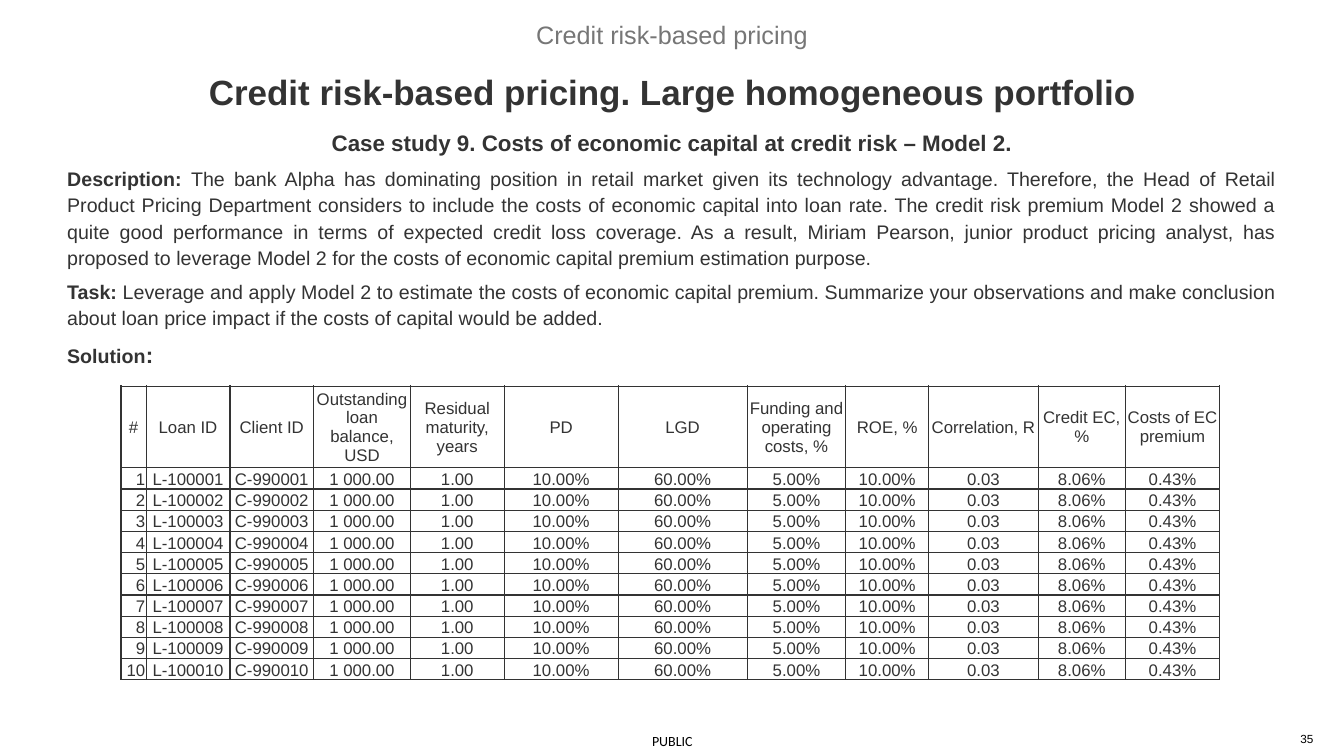
"""Build the case study slide on costs of economic capital, with its loan table."""
from dataclasses import dataclass

import lxml.etree
import pptx
import pptx.dml.color
import pptx.enum.text
import pptx.oxml.ns
import pptx.util

ALIGN = pptx.enum.text.PP_ALIGN
ANCHOR = pptx.enum.text.MSO_ANCHOR
COLORS = {"text": "333333", "muted": "767676", "footer": "000000"}
WIDTH, HEIGHT = pptx.util.Inches(13.33), pptx.util.Inches(7.5)
GRID = 100
LOAN_COUNT = 10
HEADER_ROWS, LOAN_ROWS = 10.1, 2.67


@dataclass(frozen=True)
class Area:
    left: float
    top: float
    width: float
    height: float


@dataclass(frozen=True)
class Span:
    text: str
    size: float = 14
    bold: bool = False
    color: str = "text"
    font: str = "Arial"


@dataclass(frozen=True)
class Column:
    heading: str
    width: float
    value: str
    align: ALIGN = ALIGN.CENTER


TITLE = [[[Span("Credit risk-based pricing", 18, color="muted")],
          [Span("Credit risk-based pricing. Large homogeneous portfolio", 25, True)]]]
BODY = [
    [[Span("Description: ", bold=True),
      Span("The bank Alpha has dominating position in retail market given its technology "
           "advantage. Therefore, the Head of Retail Product Pricing Department considers to "
           "include the costs of economic capital into loan rate. The credit risk premium "
           "Model 2 showed a quite good performance in terms of expected credit loss coverage. "
           "As a result, Miriam Pearson, junior product pricing analyst, has proposed to "
           "leverage Model 2 for the costs of economic capital premium estimation purpose.")]],
    [[Span("Task: ", bold=True),
      Span("Leverage and apply Model 2 to estimate the costs of economic capital premium. "
           "Summarize your observations and make conclusion about loan price impact if the "
           "costs of capital would be added.")]],
    [[Span("Solution", bold=True), Span(":", 16, True)]],
]
CASE = [[[Span("Case study 9. Costs of economic capital at credit risk – Model 2.", 16, True)]]]
COLUMNS = [
    Column("#", 1.88, "{0}", ALIGN.RIGHT),
    Column("Loan ID", 6.23, "L-1{0:05}"),
    Column("Client ID", 6.23, "C-99{0:04}"),
    Column("Outstanding loan balance, USD", 7.2, "1 000.00"),
    Column("Residual maturity, years", 6.98, "1.00"),
    Column("PD", 8.48, "10.00%"),
    Column("LGD", 9.6, "60.00%"),
    Column("Funding and operating costs, %", 7.35, "5.00%"),
    Column("ROE, %", 6.15, "10.00%"),
    Column("Correlation, R", 8.18, "0.03"),
    Column("Credit EC, %", 6.45, "8.06%"),
    Column("Costs of EC premium", 7.05, "0.43%"),
]


def across(columns: float) -> int:
    return round(WIDTH * columns / GRID)


def down(rows: float) -> int:
    return round(HEIGHT * rows / GRID)


def place(area: Area) -> tuple[int, int, int, int]:
    return across(area.left), down(area.top), across(area.width), down(area.height)


def write(frame, paragraphs: list, *, align=ALIGN.CENTER, spacing=1.0, before=0.0, extend=False):
    """Write paragraphs, each a list of lines of spans, into a text frame."""
    for index, lines in enumerate(paragraphs):
        follows = extend or index > 0
        para = frame.add_paragraph() if follows else frame.paragraphs[0]
        para.alignment = align
        para.line_spacing = spacing
        para.space_before = pptx.util.Pt(before if follows else 0)
        for number, spans in enumerate(lines):
            if number:
                para.add_line_break()
            for span in spans:
                run = para.add_run()
                run.text = span.text
                run.font.name = span.font
                run.font.size = pptx.util.Pt(span.size)
                run.font.bold = span.bold
                run.font.color.rgb = pptx.dml.color.RGBColor.from_string(COLORS[span.color])


def add_box(page, area: Area, paragraphs: list, *, anchor=ANCHOR.MIDDLE, inset=True, **layout):
    frame = page.shapes.add_textbox(*place(area)).text_frame
    frame.word_wrap = True
    frame.vertical_anchor = anchor
    if not inset:
        frame.margin_left = frame.margin_right = frame.margin_top = frame.margin_bottom = 0
    write(frame, paragraphs, **layout)
    return frame


def outline(cell) -> None:
    """Draw a thin line on all four sides of a table cell."""
    properties = cell._tc.get_or_add_tcPr()
    for side in ("L", "R", "T", "B"):
        line = lxml.etree.SubElement(properties, pptx.oxml.ns.qn(f"a:ln{side}"),
                                     w=str(pptx.util.Pt(1)))
        fill = lxml.etree.SubElement(line, pptx.oxml.ns.qn("a:solidFill"))
        lxml.etree.SubElement(fill, pptx.oxml.ns.qn("a:srgbClr"), val=COLORS["text"])


def fill_cell(cell, text: str, *, align: ALIGN, anchor: ANCHOR) -> None:
    outline(cell)
    cell.fill.background()
    cell.margin_left = cell.margin_right = cell.margin_top = pptx.util.Inches(0.01)
    cell.margin_bottom = 0
    cell.vertical_anchor = anchor
    write(cell.text_frame, [[[Span(text, 12)]]], align=align)


def add_loans(page) -> None:
    area = Area(9, 51.07, sum(column.width for column in COLUMNS),
                HEADER_ROWS + LOAN_COUNT * LOAN_ROWS)
    table = page.shapes.add_table(LOAN_COUNT + 1, len(COLUMNS), *place(area)).table
    table.first_row = table.horz_banding = False
    for index, row in enumerate(table.rows):
        row.height = down(LOAN_ROWS if index else HEADER_ROWS)
    for position, column in enumerate(COLUMNS):
        table.columns[position].width = across(column.width)
        fill_cell(table.cell(0, position), column.heading,
                  align=ALIGN.CENTER, anchor=ANCHOR.MIDDLE)
        for loan in range(1, LOAN_COUNT + 1):
            fill_cell(table.cell(loan, position), column.value.format(loan),
                      align=column.align, anchor=ANCHOR.BOTTOM)


def main() -> None:
    deck = pptx.Presentation()
    deck.slide_width, deck.slide_height = WIDTH, HEIGHT
    page = deck.slides.add_slide(deck.slide_layouts[6])
    add_box(page, Area(94.88, 96.8, 2.85, 1.87), [[[Span("35", 8.4, color="footer")]]],
            inset=False, align=ALIGN.RIGHT)
    add_box(page, Area(47.4, 96.13, 5.25, 3.87),
            [[[Span("PUBLIC", 10, color="footer", font="Calibri")]]], inset=False)
    body = add_box(page, Area(5, 16.67, 90, 76), CASE, anchor=ANCHOR.TOP, inset=False,
                   spacing=1.12)
    write(body, BODY, align=ALIGN.JUSTIFY, spacing=1.12, before=5.6, extend=True)
    add_box(page, Area(5, 0, 90, 15.6), TITLE, anchor=ANCHOR.BOTTOM, spacing=1.5)
    add_loans(page)
    deck.save("out.pptx")


if __name__ == "__main__":
    main()
